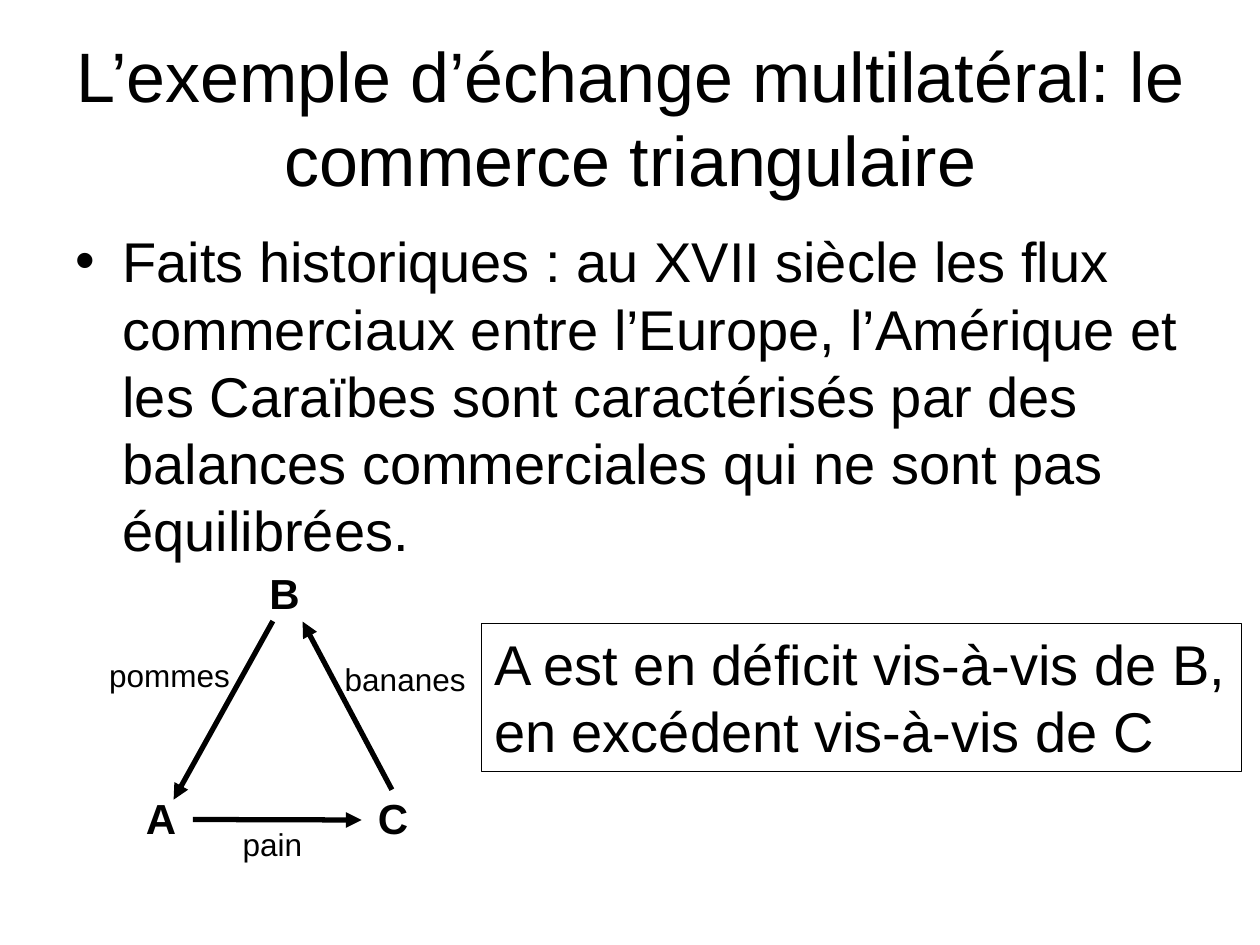
"""Build a slide on triangular trade."""
import pptx
import pptx.dml.color
import pptx.enum.shapes
import pptx.enum.text
import pptx.oxml.ns
import pptx.util
from lxml import etree

Cm = pptx.util.Cm
Pt = pptx.util.Pt
Fit = pptx.enum.text.MSO_AUTO_SIZE
Mid = pptx.enum.text.MSO_ANCHOR
Side = pptx.enum.text.PP_ALIGN
qn = pptx.oxml.ns.qn

THEME = {
    "ink": pptx.dml.color.RGBColor(0, 0, 0),
    "face": "Arial",
    "title": Pt(40),
    "body": Pt(32),
    "node": Pt(24),
    "label": Pt(18),
    "arrow": Pt(3),
    "edge": Pt(0.75),
}
NODES = [("C", 7.37, 15.85), ("B", 5.18, 11.32), ("A", 2.69, 15.85)]
LABELS = [("bananes", 6.7, 13.18, 2.95), ("pommes", 1.95, 13.11, 2.95),
          ("pain", 4.64, 16.51, 1.7)]
ARROWS = [(3.89, 16.52, 7.29, 16.53), (7.9, 15.92, 6.1, 12.53),
          (5.5, 12.52, 3.5, 16.12)]


def apply(item, vals):
    """Set each attribute of an item from a dict."""
    for key, val in vals.items():
        setattr(item, key, val)


def place(shape, left, top, width, height):
    """Move and size a shape, in centimetres."""
    apply(shape, {"left": Cm(left), "top": Cm(top),
                  "width": Cm(width), "height": Cm(height)})


def style(para, size, bold=False, align=Side.LEFT):
    """Format one paragraph."""
    para.alignment = align
    apply(para.font, {"name": THEME["face"], "size": THEME[size], "bold": bold})
    para.font.color.rgb = THEME["ink"]


def write(shape, text, size, bold=False, align=Side.LEFT, mark=None, **frame):
    """Fill a shape with formatted text, bulleted if a mark is given."""
    body = shape.text_frame
    body.text = text
    apply(body, frame)
    for para in body.paragraphs:
        if mark:
            hang(para, mark)
        style(para, size, bold, align)


def hang(para, mark):
    """Give a paragraph a bullet and a hanging indent."""
    props = para._p.get_or_add_pPr()
    for key, val in {"marL": Cm(0.95), "indent": Cm(-0.95)}.items():
        props.set(key, str(int(val)))
    etree.SubElement(props, qn("a:buFont")).set("typeface", THEME["face"])
    etree.SubElement(props, qn("a:buChar")).set("char", mark)


def add_title(slide, text):
    """Format the title placeholder."""
    shape = slide.shapes.title
    place(shape, 1.27, 0.76, 22.86, 3.18)
    write(shape, text, "title", align=Side.CENTER, word_wrap=True,
          auto_size=Fit.NONE, vertical_anchor=Mid.MIDDLE)


def add_bullet(slide, text):
    """Add the bulleted body text."""
    shape = slide.shapes.add_textbox(Cm(1.27), Cm(4.45), Cm(22.86), Cm(12.57))
    write(shape, text, "body", mark="•", word_wrap=True, auto_size=Fit.NONE)


def add_label(slide, text, left, top, width, height, size, bold=False):
    """Add a short text that fits its box."""
    shape = slide.shapes.add_textbox(Cm(left), Cm(top), Cm(width), Cm(height))
    write(shape, text, size, bold, word_wrap=False, auto_size=Fit.SHAPE_TO_FIT_TEXT)


def add_arrow(slide, *ends):
    """Add a straight arrow between two points."""
    kind = pptx.enum.shapes.MSO_CONNECTOR.STRAIGHT
    arrow = slide.shapes.add_connector(kind, *map(Cm, ends))
    arrow.line.width = THEME["arrow"]
    arrow.line.color.rgb = THEME["ink"]
    line = arrow.line._get_or_add_ln()
    etree.SubElement(line, qn("a:tailEnd")).set("type", "triangle")
    etree.SubElement(arrow._element.spPr, qn("a:effectLst"))


def add_box(slide, text):
    """Add the outlined conclusion."""
    kind = pptx.enum.shapes.MSO_SHAPE.RECTANGLE
    box = slide.shapes.add_shape(kind, Cm(9.71), Cm(12.57), Cm(15.32), Cm(2.99))
    box.shadow.inherit = False
    box.fill.background()
    box.line.width = THEME["edge"]
    box.line.color.rgb = THEME["ink"]
    write(box, text, "body", word_wrap=False, vertical_anchor=Mid.TOP,
          auto_size=Fit.SHAPE_TO_FIT_TEXT)


def main():
    """Build and save the slide."""
    deck = pptx.Presentation()
    apply(deck, {"slide_width": Cm(25.4), "slide_height": Cm(19.05)})
    slide = deck.slides.add_slide(deck.slide_layouts[5])
    add_title(slide, "L’exemple d’échange multilatéral: le commerce triangulaire")
    add_bullet(slide, "Faits historiques : au XVII siècle les flux commerciaux "
               "entre l’Europe, l’Amérique et les Caraïbes sont caractérisés par "
               "des balances commerciales qui ne sont pas équilibrées.")
    for text, left, top in NODES:
        add_label(slide, text, left, top, 1.12, 1.27, "node", True)
    for ends in ARROWS:
        add_arrow(slide, *ends)
    for text, left, top, width in LABELS:
        add_label(slide, text, left, top, width, 1.02, "label")
    add_box(slide, "A est en déficit vis-à-vis de B,\nen excédent vis-à-vis de C")
    deck.save("out.pptx")


if __name__ == "__main__":
    main()
